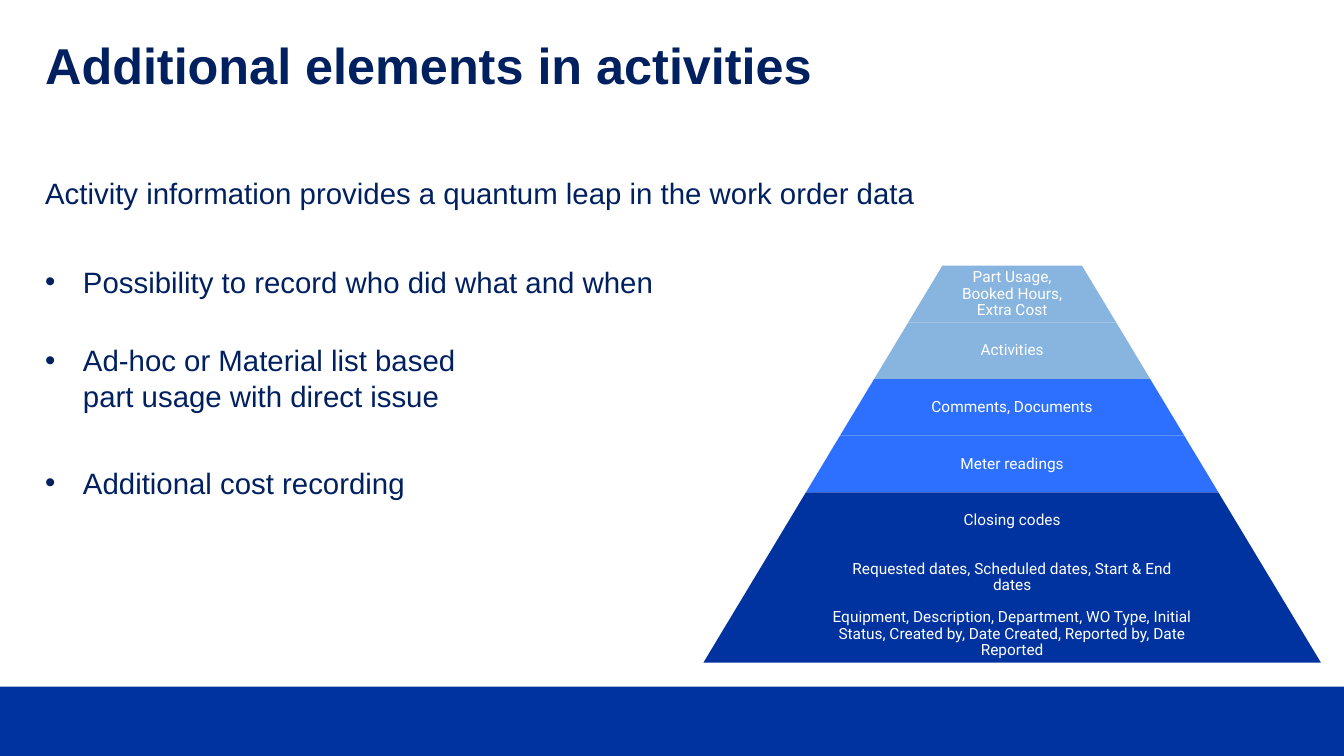
from lxml.etree import SubElement
from pptx import Presentation
from pptx.dml.color import RGBColor
from pptx.enum.shapes import MSO_SHAPE
from pptx.enum.text import MSO_ANCHOR, MSO_AUTO_SIZE, PP_ALIGN
from pptx.oxml.ns import qn
from pptx.util import Pt

EMU_PER_PX = 9525
NAVY = RGBColor(0x00, 0x20, 0x60)
DEEP_BLUE = RGBColor(0x00, 0x33, 0xA0)
BRIGHT_BLUE = RGBColor(0x2D, 0x70, 0xFF)
PALE_BLUE = RGBColor(0x88, 0xB5, 0xE0)
WHITE = RGBColor(0xFF, 0xFF, 0xFF)

PYRAMID_CENTER, PYRAMID_TOP = 964, 253
LEVEL_HEIGHT, TOP_LEVEL_WIDTH, WIDTH_STEP = 54, 198, 65
LABEL_SHARE = 0.65
BULLET_INDENT = 36

LEVELS = [
    ("Part Usage, Booked Hours, Extra Cost", PALE_BLUE),
    ("Activities", PALE_BLUE),
    ("Comments, Documents", BRIGHT_BLUE),
    ("Meter readings", BRIGHT_BLUE),
    ("Closing codes", DEEP_BLUE),
    ("Requested dates, Scheduled dates, Start & End dates", DEEP_BLUE),
    ("Equipment, Description, Department, WO Type, Initial Status, Created by, "
     "Date Created, Reported by, Date Reported", DEEP_BLUE),
]

STATEMENTS = [
    ("Activity information provides a quantum leap in the work order data", False, 38),
    ("Possibility to record who did what and when", True, 31),
    ("Ad-hoc or Material list based\vpart usage with direct issue", True, 37),
    ("Additional cost recording", True, 6),
]


def px(length):
    """Turn pixels into EMU."""
    return round(length * EMU_PER_PX)


def box(left, top, width, height):
    """Return a position and size in EMU."""
    return px(left), px(top), px(width), px(height)


def prepare_frame(frame, inset=0, anchor=MSO_ANCHOR.TOP):
    """Set the wrapping, insets and anchor of a text frame."""
    frame.word_wrap = True
    frame.auto_size = MSO_AUTO_SIZE.NONE
    frame.vertical_anchor = anchor
    frame.margin_left = frame.margin_right = px(inset)
    frame.margin_top = frame.margin_bottom = px(inset)


def add_bullet(paragraph):
    """Give a paragraph a round bullet with a hanging indent."""
    properties = paragraph._p.get_or_add_pPr()
    properties.set("marL", str(px(BULLET_INDENT)))
    properties.set("indent", str(-px(BULLET_INDENT)))
    SubElement(properties, qn("a:buFont"), typeface="Arial")
    SubElement(properties, qn("a:buChar"), char="•")


def write(paragraph, text, *, size, color, font="Arial", bold=False,
          align=PP_ALIGN.LEFT, spacing=1.0, after=0, bullet=False):
    """Fill a paragraph with formatted text."""
    paragraph.text = text
    if bullet:
        add_bullet(paragraph)
    paragraph.alignment = align
    paragraph.line_spacing = spacing
    paragraph.space_before = Pt(0)
    paragraph.space_after = Pt(after)
    for run in paragraph.runs:
        run.font.name = font
        run.font.size = Pt(size)
        run.font.bold = bold
        run.font.color.rgb = color


def add_block(slide, kind, place, color):
    """Add a flat filled shape without outline."""
    block = slide.shapes.add_shape(kind, *place)
    block.shadow.inherit = False
    block.fill.solid()
    block.fill.fore_color.rgb = color
    block.line.fill.background()
    return block


def add_title(slide, text):
    """Place and fill the title placeholder."""
    title = slide.shapes.title
    title.left, title.top, title.width, title.height = box(43, 39, 1194, 79)
    prepare_frame(title.text_frame)
    write(title.text_frame.paragraphs[0], text,
          size=36, color=NAVY, bold=True, spacing=0.9)


def add_statements(slide):
    """Add the introduction and its bullets."""
    frame = slide.shapes.add_textbox(*box(43, 167, 1194, 484)).text_frame
    prepare_frame(frame)
    for index, (text, bullet, after) in enumerate(STATEMENTS):
        paragraph = frame.add_paragraph() if index else frame.paragraphs[0]
        write(paragraph, text, size=21, color=NAVY, after=after, bullet=bullet)


def add_level(slide, index, label, color):
    """Add one pyramid level with its label."""
    width = TOP_LEVEL_WIDTH + WIDTH_STEP * index
    top = PYRAMID_TOP + LEVEL_HEIGHT * index
    level = add_block(slide, MSO_SHAPE.TRAPEZOID,
                      box(PYRAMID_CENTER - width / 2, top, width, LEVEL_HEIGHT), color)
    level.adjustments[0] = WIDTH_STEP / 2 / LEVEL_HEIGHT

    label_width = width * LABEL_SHARE
    frame = slide.shapes.add_textbox(
        *box(PYRAMID_CENTER - label_width / 2, top, label_width, LEVEL_HEIGHT)).text_frame
    prepare_frame(frame, inset=2, anchor=MSO_ANCHOR.MIDDLE)
    write(frame.paragraphs[0], label, size=11, color=WHITE, font="Roboto",
          align=PP_ALIGN.CENTER, spacing=0.9)


def main():
    """Build the slide and save it."""
    presentation = Presentation()
    presentation.slide_width, presentation.slide_height = px(1280), px(720)
    slide = presentation.slides.add_slide(presentation.slide_layouts[5])
    add_block(slide, MSO_SHAPE.RECTANGLE, box(0, 654, 1280, 66), DEEP_BLUE)
    add_title(slide, "Additional elements in activities")
    add_statements(slide)
    for index, (label, color) in enumerate(LEVELS):
        add_level(slide, index, label, color)
    presentation.save("out.pptx")


if __name__ == "__main__":
    main()
